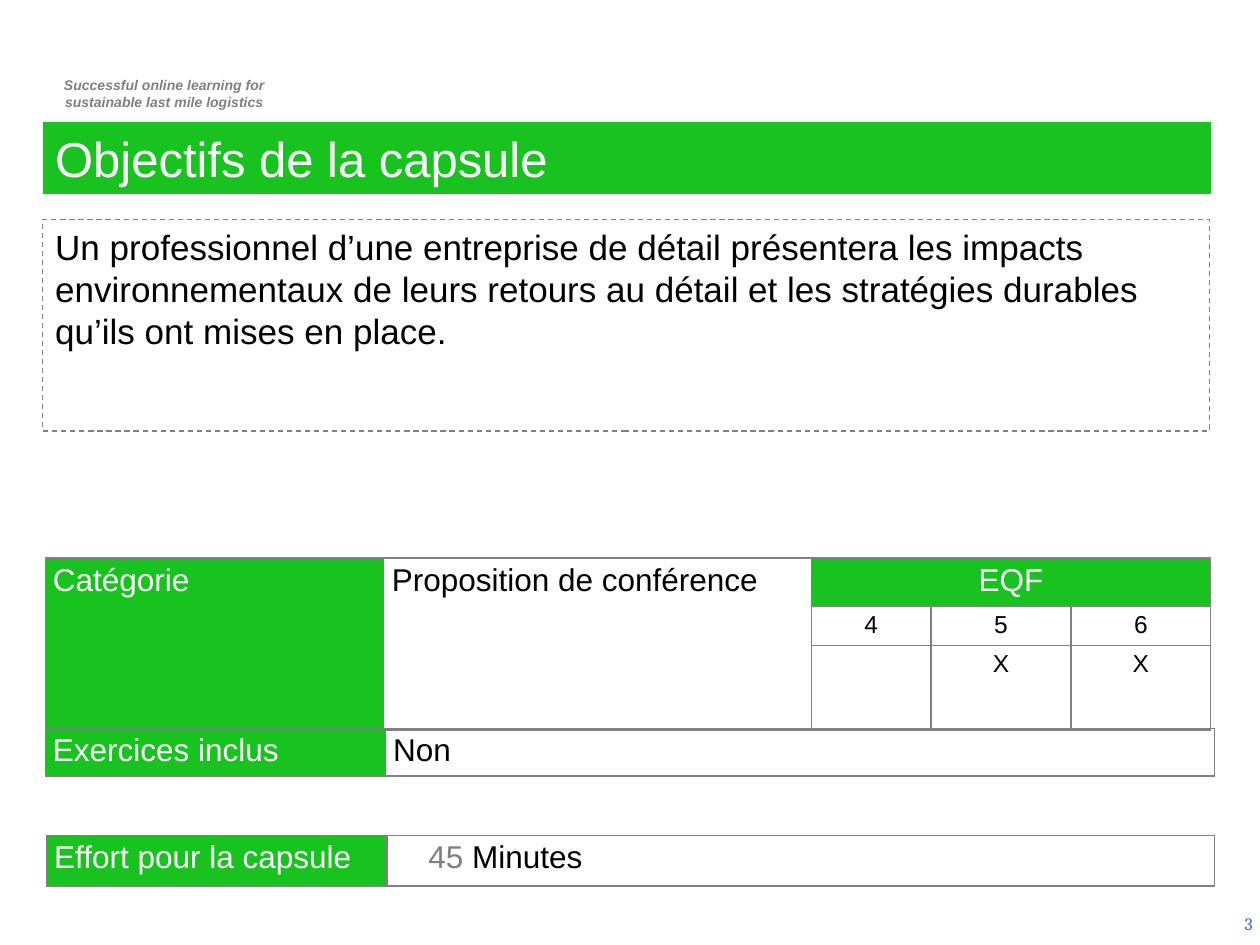
from lxml import etree
from pptx import Presentation
from pptx.dml.color import RGBColor
from pptx.enum.dml import MSO_LINE
from pptx.enum.shapes import MSO_SHAPE
from pptx.enum.text import MSO_ANCHOR, PP_ALIGN
from pptx.oxml.ns import qn
from pptx.util import Inches, Pt

LEFT, CENTER, RIGHT = PP_ALIGN.LEFT, PP_ALIGN.CENTER, PP_ALIGN.RIGHT
TOP, MIDDLE = MSO_ANCHOR.TOP, MSO_ANCHOR.MIDDLE
RECTANGLE, DASH = MSO_SHAPE.RECTANGLE, MSO_LINE.DASH

COLORS = {"green": "18C320", "white": "FFFFFF", "black": "000000",
          "gray": "7F7F7F", "border": "808080", "blue": "3366CC"}
COLUMNS, ROWS = 100, 75


class SlideBuilder:
    """Places styled elements on a grid of 100 columns by 75 rows."""

    def __init__(self, width, height):
        self.deck = Presentation()
        self.deck.slide_width, self.deck.slide_height = width, height
        self.slide = self.deck.slides.add_slide(self.deck.slide_layouts[6])

    def across(self, columns):
        return round(self.deck.slide_width * columns / COLUMNS)

    def down(self, rows):
        return round(self.deck.slide_height * rows / ROWS)

    def place(self, left, top, width, height):
        return self.across(left), self.down(top), self.across(width), self.down(height)

    def color(self, name):
        return RGBColor.from_string(COLORS[name])

    def style(self, font, size, color, name="Arial", emphasis=False):
        font.name, font.size = name, Pt(size)
        font.bold = font.italic = emphasis
        font.color.rgb = self.color(color)

    def fill_text(self, frame, text, size, color, align=LEFT, anchor=TOP, **look):
        frame.word_wrap = True
        frame.vertical_anchor = anchor
        frame.text = text
        for paragraph in frame.paragraphs:
            paragraph.alignment = align
            for run in paragraph.runs:
                self.style(run.font, size, color, **look)

    def text(self, box, text, size, color, **look):
        label = self.slide.shapes.add_textbox(*self.place(*box))
        self.fill_text(label.text_frame, text, size, color, **look)

    def panel(self, box, text, size, color, fill=None):
        panel = self.slide.shapes.add_shape(RECTANGLE, *self.place(*box))
        panel.shadow.inherit = False
        if fill:
            panel.fill.solid()
            panel.fill.fore_color.rgb = self.color(fill)
            panel.line.fill.background()
        else:
            panel.fill.background()
            panel.line.color.rgb = self.color("border")
            panel.line.width = Pt(0.75)
            panel.line.dash_style = DASH
        self.fill_text(panel.text_frame, text, size, color)

    def table(self, left, top, widths, heights):
        box = self.place(left, top, sum(widths), sum(heights))
        table = self.slide.shapes.add_table(len(heights), len(widths), *box).table
        table.first_row = table.horz_banding = False
        for column, width in zip(table.columns, widths):
            column.width = self.across(width)
        for row, height in zip(table.rows, heights):
            row.height = self.down(height)
        for cell in table.iter_cells():
            self.borders(cell)
            cell.fill.background()
            self.cell(cell, "", 14)
        return table

    def borders(self, cell):
        properties = cell._tc.get_or_add_tcPr()
        for side in ("a:lnL", "a:lnR", "a:lnT", "a:lnB"):
            edge = etree.SubElement(properties, qn(side), w=str(Pt(1)))
            fill = etree.SubElement(edge, qn("a:solidFill"))
            etree.SubElement(fill, qn("a:srgbClr"), val=COLORS["border"])

    def cell(self, cell, text, size=18, color="black", align=LEFT, fill=None):
        cell.margin_left = cell.margin_right = Inches(0.06)
        cell.margin_top = cell.margin_bottom = Inches(0.04)
        if fill:
            cell.fill.solid()
            cell.fill.fore_color.rgb = self.color(fill)
        self.fill_text(cell.text_frame, text, size, color, align)
        if not text:
            cell.text_frame.paragraphs[0].font.size = Pt(size)

    def header(self, cell, text, align=LEFT):
        self.cell(cell, text, color="white", align=align, fill="green")

    def open_edge(self, left_cell, right_cell):
        """Hides the border between two neighbouring cells."""
        for cell, side in ((left_cell, "a:lnR"), (right_cell, "a:lnL")):
            edge = cell._tc.tcPr.find(qn(side))
            edge.remove(edge[0])
            etree.SubElement(edge, qn("a:noFill"))


def main():
    page = SlideBuilder(Inches(10), Inches(7.5))

    # Tagline and page number
    page.text((2.9, 5.6, 20.3, 3.7),
              "Successful online learning for\nsustainable last mile logistics",
              8, "gray", align=CENTER, emphasis=True)
    page.text((77.1, 71.3, 23.3, 4), "3", 10, "blue",
              align=RIGHT, anchor=MIDDLE, name="Cambria")

    # Title and objective
    page.panel((3.4, 9.7, 92.7, 5.7), "Objectifs de la capsule", 28, "white", "green")
    page.panel((3.4, 17.4, 92.6, 16.8),
               "Un professionnel d’une entreprise de détail présentera les impacts "
               "environnementaux de leurs retours au détail et les stratégies durables "
               "qu’ils ont mises en place.", 20, "black")

    # Category and EQF levels
    category = page.table(3.6, 44.3, (26.9, 33.9, 9.5, 11.1, 11.1), (3.7, 3.1, 6.7))
    for row in range(3):
        page.open_edge(category.cell(row, 0), category.cell(row, 1))
    for column in (0, 1):
        category.cell(0, column).merge(category.cell(2, column))
    category.cell(0, 2).merge(category.cell(0, 4))
    page.header(category.cell(0, 0), "Catégorie")
    page.cell(category.cell(0, 1), "Proposition de conférence")
    page.header(category.cell(0, 2), "EQF", CENTER)
    for column, (level, mark) in enumerate((("4", ""), ("5", "X"), ("6", "X")), 2):
        page.cell(category.cell(1, column), level, 14, align=CENTER)
        page.cell(category.cell(2, column), mark, 14, align=CENTER)

    # Exercises
    exercises = page.table(3.6, 57.8, (27, 65.8), (3.7,))
    page.open_edge(exercises.cell(0, 0), exercises.cell(0, 1))
    page.header(exercises.cell(0, 0), "Exercices inclus")
    page.cell(exercises.cell(0, 1), "Non")

    # Effort
    effort = page.table(3.7, 66.3, (27, 65.7), (4,))
    page.header(effort.cell(0, 0), "Effort pour la capsule")
    duration = effort.cell(0, 1)
    page.cell(duration, "45 ", color="gray")
    paragraph = duration.text_frame.paragraphs[0]
    paragraph._p.get_or_add_pPr().set("marL", str(Inches(0.27)))
    unit = paragraph.add_run()
    unit.text = "Minutes"
    page.style(unit.font, 18, "black")

    page.deck.save("out.pptx")


if __name__ == "__main__":
    main()
